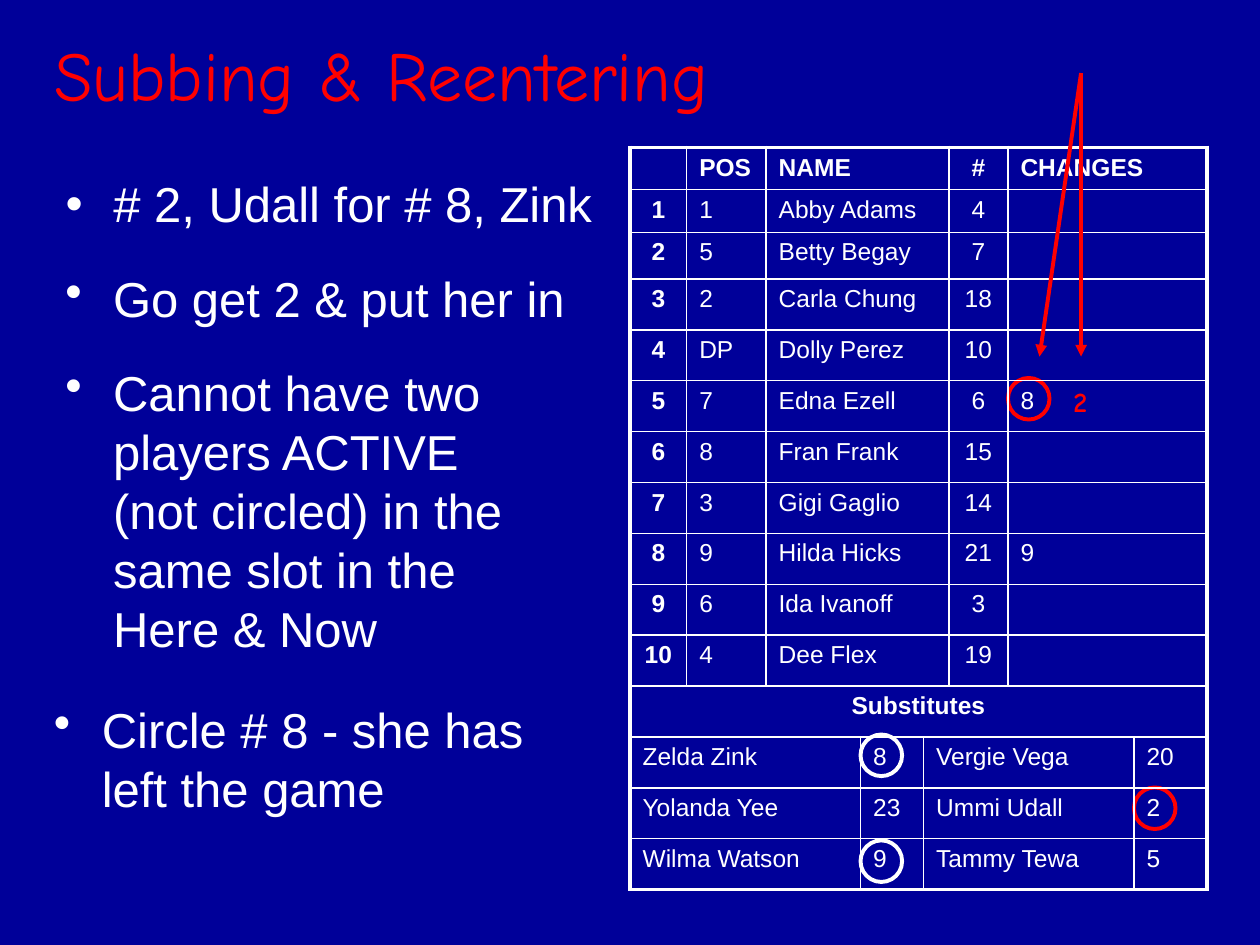
from dataclasses import dataclass

import pptx
import pptx.dml.color
import pptx.enum.shapes
import pptx.enum.text
import pptx.oxml.ns
import pptx.util
from lxml import etree

Inches, Pt = pptx.util.Inches, pptx.util.Pt
RGBColor = pptx.dml.color.RGBColor
PP_ALIGN, MSO_ANCHOR = pptx.enum.text.PP_ALIGN, pptx.enum.text.MSO_ANCHOR
qn = pptx.oxml.ns.qn

NAVY = RGBColor(0x00, 0x00, 0x99)
RED = RGBColor(0xFF, 0x00, 0x00)
WHITE = RGBColor(0xFF, 0xFF, 0xFF)
THICK, THIN = Pt(2.25), Pt(1)
BODY_FONT, TITLE_FONT = "Arial", "Comic Neue"
CIRCLE = 0.33


@dataclass
class Bullet:
    text: str
    left: float
    top: float
    width: float
    height: float


@dataclass
class Circle:
    left: float
    top: float
    color: RGBColor


@dataclass
class Entry:
    text: str
    col: int
    span: int = 1
    bold: bool = False
    centered: bool = False


BULLETS = [
    Bullet("# 2, Udall for # 8, Zink", 0.42, 1.33, 4.67, 0.67),
    Bullet("Go get 2 & put her in", 0.42, 2.08, 4.5, 0.58),
    Bullet("Cannot have two players ACTIVE (not circled) in the same slot "
           "in the Here & Now", 0.42, 2.83, 4, 2.08),
    Bullet("Circle # 8 - she has left the game", 0.33, 5.5, 4, 1.08),
]
CHANGE_CIRCLES = [Circle(9, 6.25, RED), Circle(8, 3, RED)]
SUB_CIRCLES = [Circle(6.83, 5.83, WHITE), Circle(6.83, 6.67, WHITE)]

COL_WIDTHS = [0.45, 0.63, 0.75, 0.5, 0.2, 0.47, 1, 0.58]
TOP_ROWS = [0.33, 0.34, 0.37]
ROW_HEIGHT = 4.85 / 12
# position, name, number, changes
PLAYERS = [
    ("1", "Abby Adams", "4", ""),
    ("5", "Betty Begay", "7", ""),
    ("2", "Carla Chung", "18", ""),
    ("DP", "Dolly Perez", "10", ""),
    ("7", "Edna Ezell", "6", "8"),
    ("8", "Fran Frank", "15", ""),
    ("3", "Gigi Gaglio", "14", ""),
    ("9", "Hilda Hicks", "21", "9"),
    ("6", "Ida Ivanoff", "3", ""),
    ("4", "Dee Flex", "19", ""),
]
SUBSTITUTES = [
    ("Zelda Zink", "8", "Vergie Vega", "20"),
    ("Yolanda Yee", "23", "Ummi Udall", "2"),
    ("Wilma Watson", "9", "Tammy Tewa", "5"),
]


def format_text(tf, size: float, color: RGBColor, font: str = BODY_FONT,
                bold: bool = False) -> None:
    for p in tf.paragraphs:
        for r in p.runs:
            r.font.size, r.font.name, r.font.bold = Pt(size), font, bold
            r.font.color.rgb = color


def place(s, left: float, top: float, width: float, height: float) -> None:
    s.left, s.top = Inches(left), Inches(top)
    s.width, s.height = Inches(width), Inches(height)


def fill_bullet(s, b: Bullet) -> None:
    place(s, b.left, b.top, b.width, b.height)
    tf = s.text_frame
    tf.text = b.text
    tf.word_wrap = True
    tf.auto_size = pptx.enum.text.MSO_AUTO_SIZE.NONE
    p = tf.paragraphs[0]
    p.space_before = Pt(5.6)
    pPr = p._p.get_or_add_pPr()
    pPr.set("marL", str(Inches(0.38)))
    pPr.set("indent", str(-Inches(0.38)))
    etree.SubElement(pPr, qn("a:buChar")).set("char", "•")
    format_text(tf, 28, WHITE)


def add_circle(shapes, c: Circle) -> None:
    s = shapes.add_shape(pptx.enum.shapes.MSO_SHAPE.OVAL, Inches(c.left),
                         Inches(c.top), Inches(CIRCLE), Inches(CIRCLE))
    s.shadow.inherit = False
    s.fill.background()
    s.line.color.rgb, s.line.width = c.color, THICK


def add_arrow(shapes, x1: float, y1: float, x2: float, y2: float) -> None:
    s = shapes.add_connector(pptx.enum.shapes.MSO_CONNECTOR.STRAIGHT,
                             Inches(x1), Inches(y1), Inches(x2), Inches(y2))
    s.line.color.rgb, s.line.width = RED, THICK
    ln = s.line._get_or_add_ln()
    etree.SubElement(ln, qn("a:tailEnd")).set("type", "triangle")
    etree.SubElement(s._element.spPr, qn("a:effectLst"))


def set_borders(cell, outer: dict[str, bool]) -> None:
    tcPr = cell._tc.get_or_add_tcPr()
    for side, is_outer in outer.items():
        ln = etree.SubElement(tcPr, qn("a:ln" + side))
        ln.set("w", str(THICK if is_outer else THIN))
        fill = etree.SubElement(ln, qn("a:solidFill"))
        etree.SubElement(fill, qn("a:srgbClr")).set("val", str(WHITE))
    cell.fill.background()


def fill_cell(table, row: int, e: Entry) -> None:
    cell = table.cell(row, e.col)
    end = e.col + e.span - 1
    if e.span > 1:
        cell.merge(table.cell(row, end))
    cell.vertical_anchor = MSO_ANCHOR.MIDDLE if row == 0 else MSO_ANCHOR.TOP
    cell.text = e.text
    p = cell.text_frame.paragraphs[0]
    p.alignment = PP_ALIGN.CENTER if e.centered else PP_ALIGN.LEFT
    p.space_before = Pt(2.8)
    format_text(cell.text_frame, 14, WHITE, bold=e.bold)
    if not e.text:
        etree.SubElement(p._p, qn("a:endParaRPr")).set("sz", "1400")
    set_borders(cell, {"L": e.col == 0, "R": end == len(COL_WIDTHS) - 1,
                       "T": row == 0, "B": row == len(table.rows) - 1})


def lineup_row(values, header: bool = False) -> list[Entry]:
    slot, pos, name, number, changes = values
    return [Entry(slot, 0, 1, True, True), Entry(pos, 1, 1, header),
            Entry(name, 2, 3, header), Entry(number, 5, 1, header, True),
            Entry(changes, 6, 2, header)]


def substitute_row(values) -> list[Entry]:
    layout = [(0, 3), (3, 1), (4, 3), (7, 1)]
    return [Entry(text, *place) for text, place in zip(values, layout)]


def add_lineup(shapes) -> None:
    rows = [lineup_row(("", "POS", "NAME", "#", "CHANGES"), header=True)]
    rows += [lineup_row((str(i), *player)) for i, player in enumerate(PLAYERS, 1)]
    rows.append([Entry("Substitutes", 0, 8, True, True)])
    rows += [substitute_row(sub) for sub in SUBSTITUTES]
    heights = TOP_ROWS + [ROW_HEIGHT] * (len(rows) - len(TOP_ROWS))

    table = shapes.add_table(len(rows), len(COL_WIDTHS), Inches(5), Inches(1.17),
                             Inches(sum(COL_WIDTHS)), Inches(sum(heights))).table
    table.first_row = table.horz_banding = False
    for column, width in zip(table.columns, COL_WIDTHS):
        column.width = Inches(width)
    for i, (height, entries) in enumerate(zip(heights, rows)):
        table.rows[i].height = Inches(height)
        for e in entries:
            fill_cell(table, i, e)


def main() -> None:
    prs = pptx.Presentation()
    prs.slide_width, prs.slide_height = Inches(10), Inches(7.5)
    slide = prs.slides.add_slide(prs.slide_layouts[1])
    slide.background.fill.solid()
    slide.background.fill.fore_color.rgb = NAVY
    shapes = slide.shapes

    # Title
    title = shapes.title
    place(title, 0.33, 0.17, 8.5, 0.83)
    title.text_frame.text = "Subbing & Reentering"
    title.text_frame.vertical_anchor = MSO_ANCHOR.MIDDLE
    title.text_frame.paragraphs[0].alignment = PP_ALIGN.LEFT
    format_text(title.text_frame, 40, RED, TITLE_FONT)

    # Bullets: the first sits in the body placeholder
    fill_bullet(slide.placeholders[1], BULLETS[0])
    for b in BULLETS[1:]:
        fill_bullet(shapes.add_textbox(0, 0, 0, 0), b)

    # Substitution marks and lineup card
    for c in CHANGE_CIRCLES:
        add_circle(shapes, c)
    entering = shapes.add_textbox(0, 0, 0, 0)
    place(entering, 8.42, 3, 0.25, 0.41)
    entering.text_frame.text = "2"
    entering.text_frame.word_wrap = True
    entering.text_frame.paragraphs[0].space_before = Pt(8)
    format_text(entering.text_frame, 16, RED, TITLE_FONT, bold=True)
    add_lineup(shapes)
    for c in SUB_CIRCLES:
        add_circle(shapes, c)

    # Arrows to the two players in the slot
    arrows = shapes.add_group_shape()
    for x in (8.25, 8.58):
        add_arrow(arrows.shapes, 8.58, 0.58, x, 2.83)

    prs.save("out.pptx")


if __name__ == "__main__":
    main()
